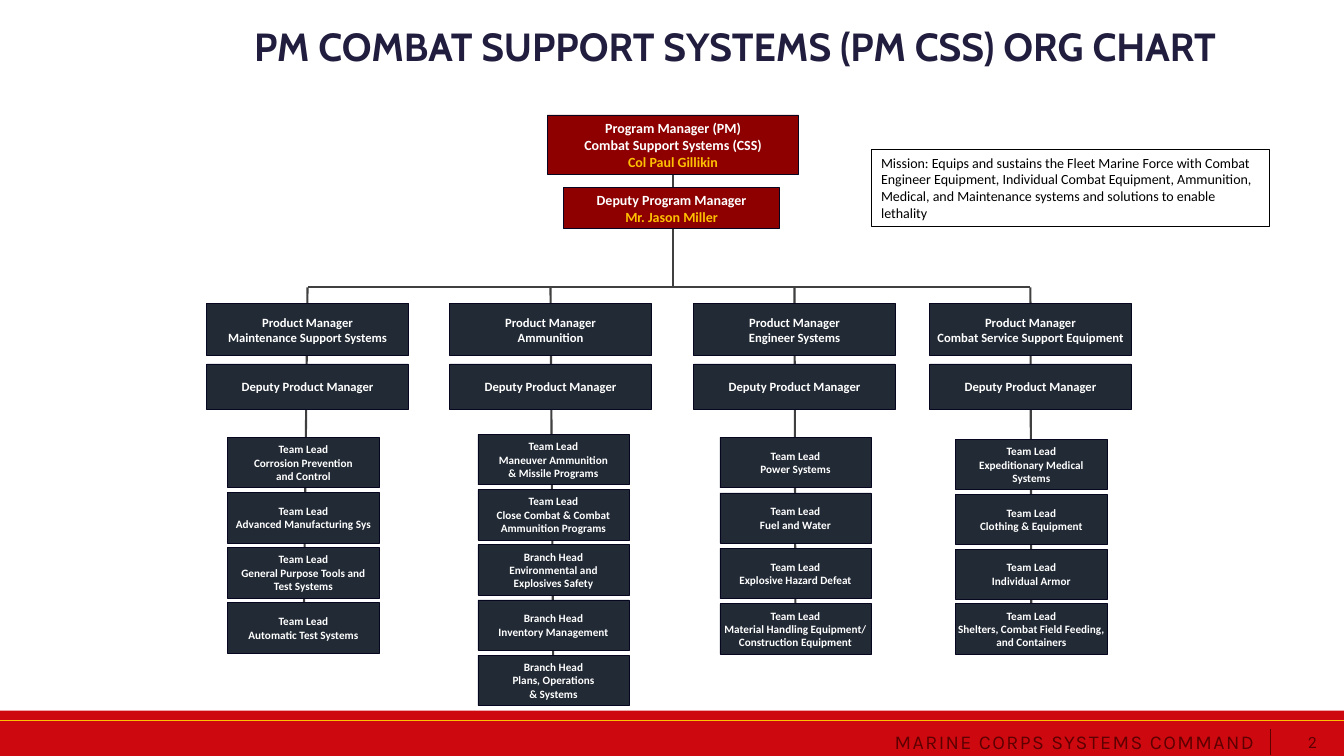
from pptx import Presentation
from pptx import util as u
from pptx.dml.color import RGBColor
from pptx.enum import shapes, text
from pptx.oxml.ns import qn
from lxml import etree

TITLE = "PM COMBAT SUPPORT SYSTEMS (PM CSS) ORG CHART"
MISSION = ("Mission: Equips and sustains the Fleet Marine Force with Combat Engineer Equipment, "
           "Individual Combat Equipment, Ammunition, Medical, and Maintenance systems and "
           "solutions to enable lethality")
COMMAND = "MARINE CORPS SYSTEMS COMMAND"
PAGE_NUMBER = "2"
LEADERS = [
    ((5.43, 1.14, 2.49, 0.59),
     ["Program Manager (PM)", "Combat Support Systems (CSS)", "Col Paul Gillikin"]),
    ((5.59, 1.86, 2.14, 0.41), ["Deputy Program Manager", "Mr. Jason Miller"]),
]
BRANCHES = [
    {"name": "Maintenance Support Systems", "left": 2.05, "team_left": 2.26,
     "first_top": 4.34, "last_top": 5.98,
     "teams": [["Team Lead", "Corrosion Prevention", "and Control"],
               ["Team Lead", "Advanced Manufacturing Sys"],
               ["Team Lead", "General Purpose Tools and", "Test Systems"],
               ["Team Lead", "Automatic Test Systems"]]},
    {"name": "Ammunition", "left": 4.46, "team_left": 4.74,
     "first_top": 4.31, "last_top": 6.5,
     "teams": [["Team Lead", "Maneuver Ammunition", "& Missile Programs"],
               ["Team Lead", "Close Combat & Combat", "Ammunition Programs"],
               ["Branch Head", "Environmental and", "Explosives Safety"],
               ["Branch Head", "Inventory Management"],
               ["Branch Head", "Plans, Operations", "& Systems"]]},
    {"name": "Engineer Systems", "left": 6.88, "team_left": 7.14,
     "first_top": 4.34, "last_top": 5.99,
     "teams": [["Team Lead", "Power Systems"],
               ["Team Lead", "Fuel and Water"],
               ["Team Lead", "Explosive Hazard Defeat"],
               ["Team Lead", "Material Handling Equipment/", "Construction Equipment"]]},
    {"name": "Combat Service Support Equipment", "left": 9.22, "team_left": 9.48,
     "first_top": 4.36, "last_top": 5.99,
     "teams": [["Team Lead", "Expeditionary Medical", "Systems"],
               ["Team Lead", "Clothing & Equipment"],
               ["Team Lead", "Individual Armor"],
               ["Team Lead", "Shelters, Combat Field Feeding,", "and Containers"]]},
]
NAVY, MAROON, RED, GOLD = "222A35", "8E0000", "CE080F", "FFC000"
EDGE, WIRE, FOOTER_INK, WHITE = "060620", "404040", "5C0000", "FFFFFF"
SLIDE_WIDTH, SLIDE_HEIGHT = 13.33, 7.5
MANAGER_WIDTH, TEAM_WIDTH, TEAM_HEIGHT = 2, 1.5, 0.5
BAR_TOP = 2.85

deck = Presentation()
deck.slide_width, deck.slide_height = u.Inches(SLIDE_WIDTH), u.Inches(SLIDE_HEIGHT)
page = deck.slides.add_slide(deck.slide_layouts[5])


def color(value):
    return RGBColor.from_string(value)


def inches(values):
    return [u.Inches(value) for value in values]


def style(paras, size, font, ink, bold=False):
    for para in paras:
        for span in para.runs:
            span.font.size, span.font.name, span.font.bold = u.Pt(size), font, bold
            span.font.color.rgb = color(ink)


def clear_margins(frame):
    frame.margin_left = frame.margin_right = frame.margin_top = frame.margin_bottom = 0


def add_line(start, end, ink, width):
    line = page.shapes.add_connector(shapes.MSO_CONNECTOR.STRAIGHT, *inches(start + end))
    line.line.color.rgb, line.line.width = color(ink), u.Pt(width)
    etree.SubElement(line._element.spPr, qn("a:effectLst"))
    return line


def add_rect(place, fill=None, edge=None, width=0.5):
    box = page.shapes.add_shape(shapes.MSO_SHAPE.RECTANGLE, *inches(place))
    box.shadow.inherit = False
    if fill:
        box.fill.solid()
        box.fill.fore_color.rgb = color(fill)
    else:
        box.fill.background()
    if edge:
        box.line.color.rgb, box.line.width = color(edge), u.Pt(width)
    else:
        box.line.fill.background()
    return box


def add_role(place, lines, size, fill=NAVY):
    box = add_rect(place, fill, EDGE)
    frame = box.text_frame
    frame.text = "\n".join(lines)
    frame.word_wrap, frame.vertical_anchor = False, text.MSO_ANCHOR.MIDDLE
    for para in frame.paragraphs:
        para.alignment = text.PP_ALIGN.CENTER
    style(frame.paragraphs, size, "Calibri", WHITE, True)
    return box


def add_footer_text(place, words, size, font):
    box = page.shapes.add_textbox(*inches(place))
    frame = box.text_frame
    frame.text = words
    frame.word_wrap, frame.vertical_anchor = True, text.MSO_ANCHOR.MIDDLE
    frame.paragraphs[0].alignment = text.PP_ALIGN.RIGHT
    style(frame.paragraphs, size, font, FOOTER_INK)
    return frame


def add_title():
    title = page.shapes.title
    title.left, title.top, title.width, title.height = inches((2.52, 0.29, 10.14, 0.39))
    frame = title.text_frame
    frame.text = TITLE
    clear_margins(frame)
    frame.auto_size, frame.vertical_anchor = text.MSO_AUTO_SIZE.NONE, text.MSO_ANCHOR.MIDDLE
    frame.paragraphs[0].alignment, frame.paragraphs[0].line_spacing = text.PP_ALIGN.LEFT, 0.9
    style(frame.paragraphs, 28, "Cabin", "211D3E", True)


def add_footer():
    add_rect((0, 7.05, SLIDE_WIDTH, 0.49), RED)
    add_line((0, 7.15), (SLIDE_WIDTH, 7.15), GOLD, 0.5)
    add_line((12.6, 7.23), (12.6, 7.49), FOOTER_INK, 0.25)
    clear_margins(add_footer_text((12.66, 7.29, 0.4, 0.15), PAGE_NUMBER, 11, "Roboto"))
    command = add_footer_text((6.8, 7.19, 5.74, 0.34), COMMAND, 14, "Karla")
    command.paragraphs[0].runs[0].font._element.set("spc", "100")


def add_leaders():
    (left, top, width, height), _ = LEADERS[0]
    center = left + width / 2
    stem = add_line((center, top + height), (center, BAR_TOP), WIRE, 1.5)
    boxes = []
    for place, lines in LEADERS:
        box = add_role(place, lines, 10, MAROON)
        style(box.text_frame.paragraphs[-1:], 10, "Calibri", GOLD, True)
        boxes.append(box)
    stem.begin_connect(boxes[0], 2)


def add_branch(branch):
    left, first, last = branch["left"], branch["first_top"], branch["last_top"]
    center = left + MANAGER_WIDTH / 2
    trunk = add_line((center, last), (center, BAR_TOP), WIRE, 1.5)
    add_role((left, 3.01, MANAGER_WIDTH, 0.52), ["Product Manager", branch["name"]], 9)
    add_role((left, 3.61, MANAGER_WIDTH, 0.45), ["Deputy Product Manager"], 9)
    step = (last - first) / (len(branch["teams"]) - 1)
    for row, lines in enumerate(branch["teams"]):
        place = (branch["team_left"], first + row * step, TEAM_WIDTH, TEAM_HEIGHT)
        box = add_role(place, lines, 8)
    trunk.begin_connect(box, 2)


def add_mission():
    frame = add_rect((8.64, 1.48, 3.95, 0.77), edge="000000", width=0.75).text_frame
    frame.text = MISSION
    frame.word_wrap, frame.vertical_anchor = True, text.MSO_ANCHOR.TOP
    frame.auto_size = text.MSO_AUTO_SIZE.SHAPE_TO_FIT_TEXT
    frame.paragraphs[0].alignment = text.PP_ALIGN.LEFT
    style(frame.paragraphs, 10, "Calibri", "000000")


add_footer()
add_title()
bar_ends = [BRANCHES[side]["left"] + MANAGER_WIDTH / 2 for side in (0, -1)]
add_line((bar_ends[0], BAR_TOP), (bar_ends[1], BAR_TOP), WIRE, 1.5)
add_leaders()
for branch in BRANCHES:
    add_branch(branch)
add_mission()
deck.save("out.pptx")
